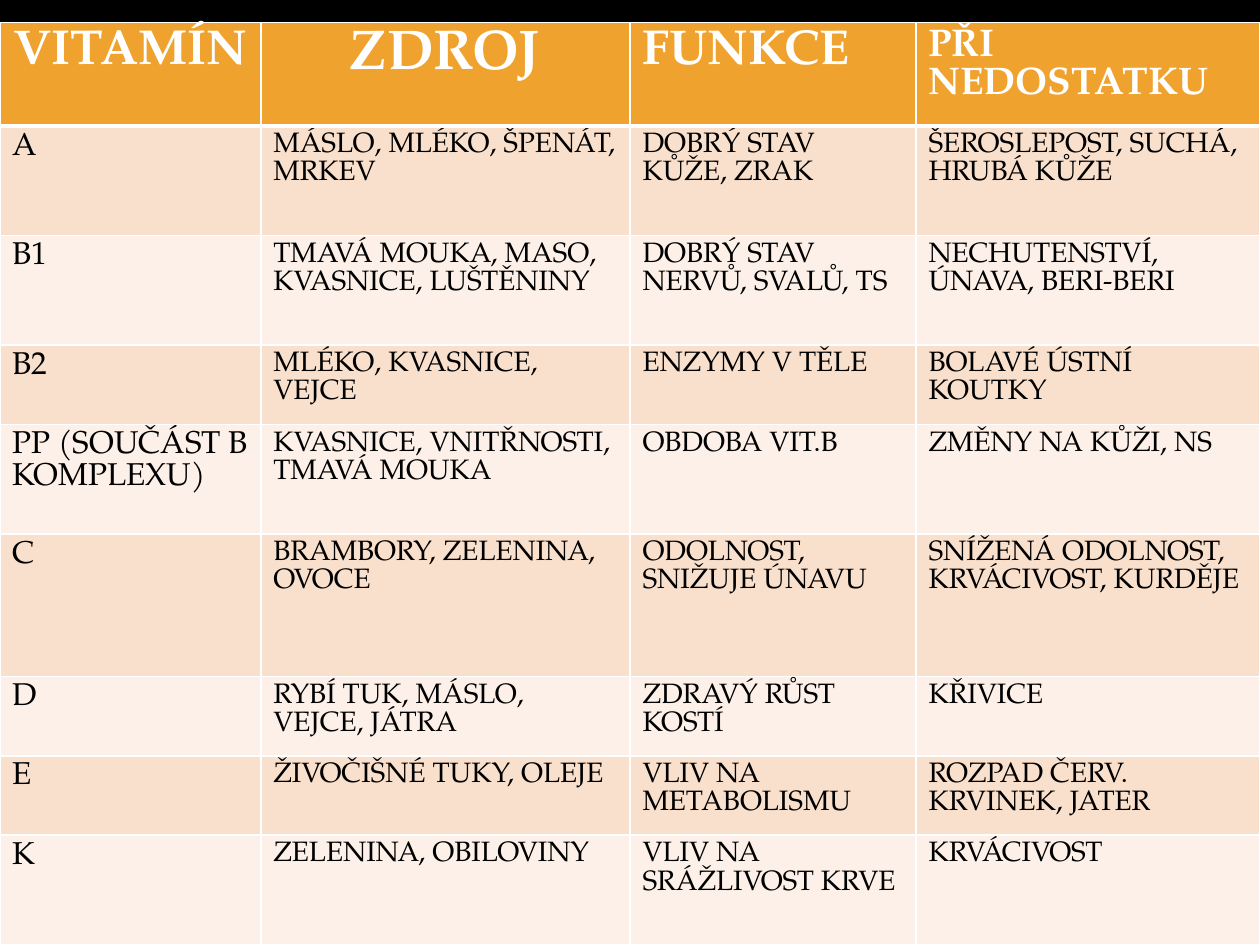
from dataclasses import dataclass
from typing import NamedTuple

from lxml import etree
from pptx import Presentation
from pptx.dml.color import RGBColor
from pptx.enum.text import PP_ALIGN
from pptx.oxml.ns import qn
from pptx.util import Inches, Pt

CENTER, LEFT = PP_ALIGN.CENTER, PP_ALIGN.LEFT
BLANK_LAYOUT = 6


@dataclass(frozen=True)
class Theme:
    font: str = "TeX Gyre Pagella"
    background: str = "000000"
    header_fill: str = "F0A22E"
    bands: tuple[str, str] = ("F9E0CD", "FCF0E8")
    border: str = "FFFFFF"
    header_text: str = "FFFFFF"
    body_text: str = "000000"
    name_size: int = 18
    body_size: int = 16
    thin: int = 1
    thick: int = 3


class Column(NamedTuple):
    heading: str
    width: float
    size: int
    align: PP_ALIGN


class Vitamin(NamedTuple):
    name: str
    source: str
    function: str
    deficiency: str
    height: float


class CellStyle(NamedTuple):
    fill: str
    color: str
    size: int
    bold: bool
    align: PP_ALIGN
    top: int
    bottom: int


THEME = Theme()
WIDTH, HEIGHT = 10, 7.5
TABLE_TOP = 0.18
HEADER_HEIGHT = 0.82
SHORT, MEDIUM, TALL = 0.63, 0.87, 1.13

COLUMNS = (
    Column("VITAMÍN", 2.07, 28, CENTER),
    Column("ZDROJ", 2.93, 32, CENTER),
    Column("FUNKCE", 2.27, 28, LEFT),
    Column("PŘI NEDOSTATKU", 2.73, 22, LEFT),
)

VITAMINS = (
    Vitamin("A", "MÁSLO, MLÉKO, ŠPENÁT, MRKEV", "DOBRÝ STAV KŮŽE, ZRAK",
            "ŠEROSLEPOST, SUCHÁ, HRUBÁ KŮŽE", MEDIUM),
    Vitamin("B1", "TMAVÁ MOUKA, MASO, KVASNICE, LUŠTĚNINY",
            "DOBRÝ STAV NERVŮ, SVALŮ, TS", "NECHUTENSTVÍ, ÚNAVA, BERI-BERI", MEDIUM),
    Vitamin("B2", "MLÉKO, KVASNICE, VEJCE", "ENZYMY V TĚLE",
            "BOLAVÉ ÚSTNÍ KOUTKY", SHORT),
    Vitamin("PP (SOUČÁST B KOMPLEXU)", "KVASNICE, VNITŘNOSTI, TMAVÁ MOUKA",
            "OBDOBA VIT.B", "ZMĚNY NA KŮŽI, NS", MEDIUM),
    Vitamin("C", "BRAMBORY, ZELENINA, OVOCE", "ODOLNOST, SNIŽUJE ÚNAVU",
            "SNÍŽENÁ ODOLNOST, KRVÁCIVOST, KURDĚJE", TALL),
    Vitamin("D", "RYBÍ TUK, MÁSLO, VEJCE, JÁTRA", "ZDRAVÝ RŮST KOSTÍ",
            "KŘIVICE", SHORT),
    Vitamin("E", "ŽIVOČIŠNÉ TUKY, OLEJE", "VLIV NA METABOLISMU",
            "ROZPAD ČERV. KRVINEK, JATER", SHORT),
    Vitamin("K", "ZELENINA, OBILOVINY", "VLIV NA SRÁŽLIVOST KRVE",
            "KRVÁCIVOST", MEDIUM),
)


def set_borders(cell, top: int, bottom: int) -> None:
    properties = cell._tc.get_or_add_tcPr()
    widths = {"a:lnL": THEME.thin, "a:lnR": THEME.thin, "a:lnT": top, "a:lnB": bottom}
    for tag, width in widths.items():
        line = etree.SubElement(properties, qn(tag), w=str(Pt(width)))
        fill = etree.SubElement(line, qn("a:solidFill"))
        etree.SubElement(fill, qn("a:srgbClr"), val=THEME.border)


def fill_cell(cell, text: str, style: CellStyle) -> None:
    set_borders(cell, style.top, style.bottom)
    cell.fill.solid()
    cell.fill.fore_color.rgb = RGBColor.from_string(style.fill)
    cell.text_frame.text = text
    para = cell.text_frame.paragraphs[0]
    para.alignment = style.align
    font = para.runs[0].font
    font.name, font.size, font.bold = THEME.font, Pt(style.size), style.bold
    font.color.rgb = RGBColor.from_string(style.color)


def header_style(column: Column) -> CellStyle:
    return CellStyle(THEME.header_fill, THEME.header_text, column.size, True,
                     column.align, THEME.thin, THEME.thick)


def body_style(row: int, column: int) -> CellStyle:
    size = THEME.body_size if column else THEME.name_size
    top = THEME.thin if row else THEME.thick
    return CellStyle(THEME.bands[row % 2], THEME.body_text, size, False,
                     LEFT, top, THEME.thin)


def add_vitamin_table(page) -> None:
    heights = [HEADER_HEIGHT, *(vitamin.height for vitamin in VITAMINS)]
    table = page.shapes.add_table(
        len(heights), len(COLUMNS), 0, Inches(TABLE_TOP),
        Inches(WIDTH), Inches(sum(heights))).table
    for row, height in zip(table.rows, heights):
        row.height = Inches(height)
    for index, column in enumerate(COLUMNS):
        table.columns[index].width = Inches(column.width)
        fill_cell(table.cell(0, index), column.heading, header_style(column))
        for row, vitamin in enumerate(VITAMINS):
            fill_cell(table.cell(row + 1, index), vitamin[index], body_style(row, index))


def main() -> None:
    deck = Presentation()
    deck.slide_width, deck.slide_height = Inches(WIDTH), Inches(HEIGHT)
    page = deck.slides.add_slide(deck.slide_layouts[BLANK_LAYOUT])
    page.background.fill.solid()
    page.background.fill.fore_color.rgb = RGBColor.from_string(THEME.background)
    add_vitamin_table(page)
    deck.save("out.pptx")


if __name__ == "__main__":
    main()
